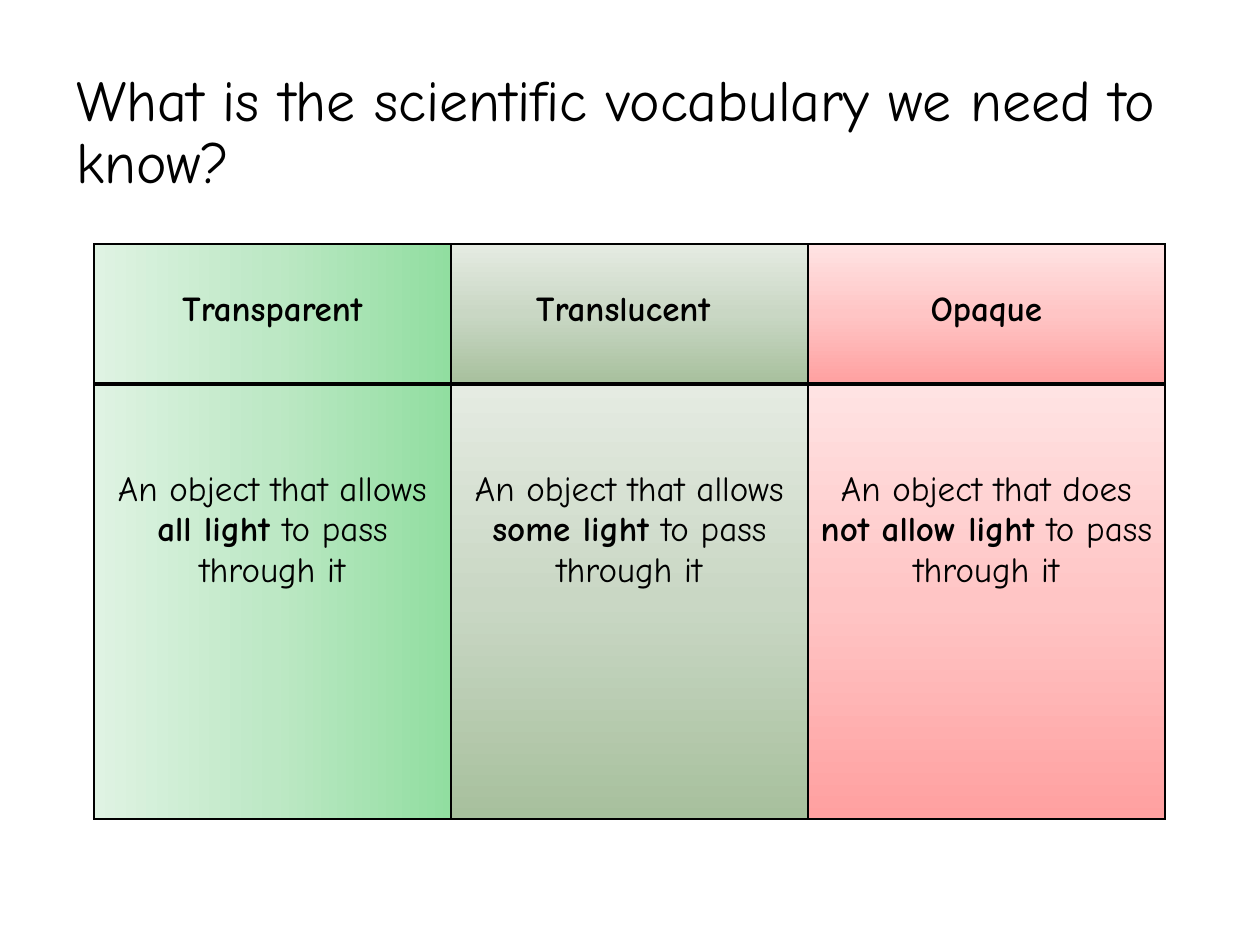
from lxml import etree
from pptx import Presentation
from pptx.dml.color import RGBColor
from pptx.enum.text import MSO_ANCHOR, PP_ALIGN
from pptx.oxml.ns import qn
from pptx.util import Pt

MIDDLE = MSO_ANCHOR.MIDDLE
TOP = MSO_ANCHOR.TOP
CENTER = PP_ALIGN.CENTER
FONT = "Comic Neue"
EMU_PER_INCH = 914400
PX_PER_INCH = 126
COLORS = {
    "ink": "000000",
    "green": ("91DEA0", "BDE8C5", "DFF3E3"),
    "sage": ("A7C09D", "C9D7C4", "E5EBE2"),
    "pink": ("FFA0A0", "FFC5C5", "FFE3E3"),
}
VOCABULARY = [
    ("Transparent", ("An object that allows ", "all light ", "to pass through it"), "green", 180),
    ("Translucent ", ("An object that allows ", "some light ", "to pass through it"), "sage", 270),
    ("Opaque", ("An object that does ", "not allow light ", "to pass through it"), "pink", 270),
]


def px(length):
    return round(length * EMU_PER_INCH / PX_PER_INCH)


def style_font(paragraph, size):
    paragraph.font.name = FONT
    paragraph.font.size = Pt(size)
    paragraph.font.color.rgb = RGBColor.from_string(COLORS["ink"])


def add_title(slide, box, wording):
    frame = slide.shapes.add_textbox(*map(px, box)).text_frame
    frame.word_wrap = True
    frame.vertical_anchor = MIDDLE
    heading = frame.paragraphs[0]
    heading.text = wording
    heading.line_spacing = 0.9
    style_font(heading, 33)


def add_color(parent, color):
    etree.SubElement(parent, qn("a:srgbClr"), val=color)


def add_borders(cell, widths):
    properties = cell._tc.get_or_add_tcPr()
    for side, width in widths.items():
        border = etree.SubElement(properties, qn(f"a:ln{side}"), w=str(Pt(width)))
        add_color(etree.SubElement(border, qn("a:solidFill")), COLORS["ink"])


def add_gradient(cell, shades, angle):
    properties = cell._tc.get_or_add_tcPr()
    gradient = etree.SubElement(properties, qn("a:gradFill"), rotWithShape="1")
    stops = etree.SubElement(gradient, qn("a:gsLst"))
    for index, shade in enumerate(shades):
        add_color(etree.SubElement(stops, qn("a:gs"), pos=str(index * 50000)), shade)
    etree.SubElement(gradient, qn("a:lin"), ang=str(angle * 60000), scaled="0")


def fill_cell(cell, pieces, bold_index, margin_top, borders, shades, angle):
    cell.margin_top = px(margin_top)
    cell.vertical_anchor = TOP
    paragraph = cell.text_frame.paragraphs[0]
    paragraph.alignment = CENTER
    style_font(paragraph, 20)
    for index, piece in enumerate(pieces):
        run = paragraph.add_run()
        run.text = piece
        run.font.bold = index == bold_index
    add_borders(cell, borders)
    add_gradient(cell, shades, angle)


def add_vocabulary_table(slide, box, header_height):
    left, top, width, height = box
    frame = slide.shapes.add_table(2, len(VOCABULARY), *map(px, box))
    table = frame.table
    table.first_row = False
    table.horz_banding = False
    table.rows[0].height = px(header_height)
    table.rows[1].height = px(height - header_height)
    header_borders = {"L": 1, "R": 1, "T": 1, "B": 2}
    meaning_borders = {"L": 1, "R": 1, "T": 2, "B": 1}
    for column, (term, meaning, palette, angle) in enumerate(VOCABULARY):
        table.columns[column].width = px(width / len(VOCABULARY))
        shades = COLORS[palette]
        fill_cell(table.cell(0, column), (term,), 0, 46, header_borders, shades, angle)
        fill_cell(table.cell(1, column), meaning, 1, 86, meaning_borders, shades, angle)


def main():
    presentation = Presentation()
    presentation.slide_width = px(1260)
    presentation.slide_height = px(945)
    slide = presentation.slides.add_slide(presentation.slide_layouts[6])
    add_title(slide, (64, 55, 1134, 158), "What is the scientific vocabulary we need to know?")
    add_vocabulary_table(slide, (94, 244, 1071, 575), 140)
    presentation.save("out.pptx")


if __name__ == "__main__":
    main()
